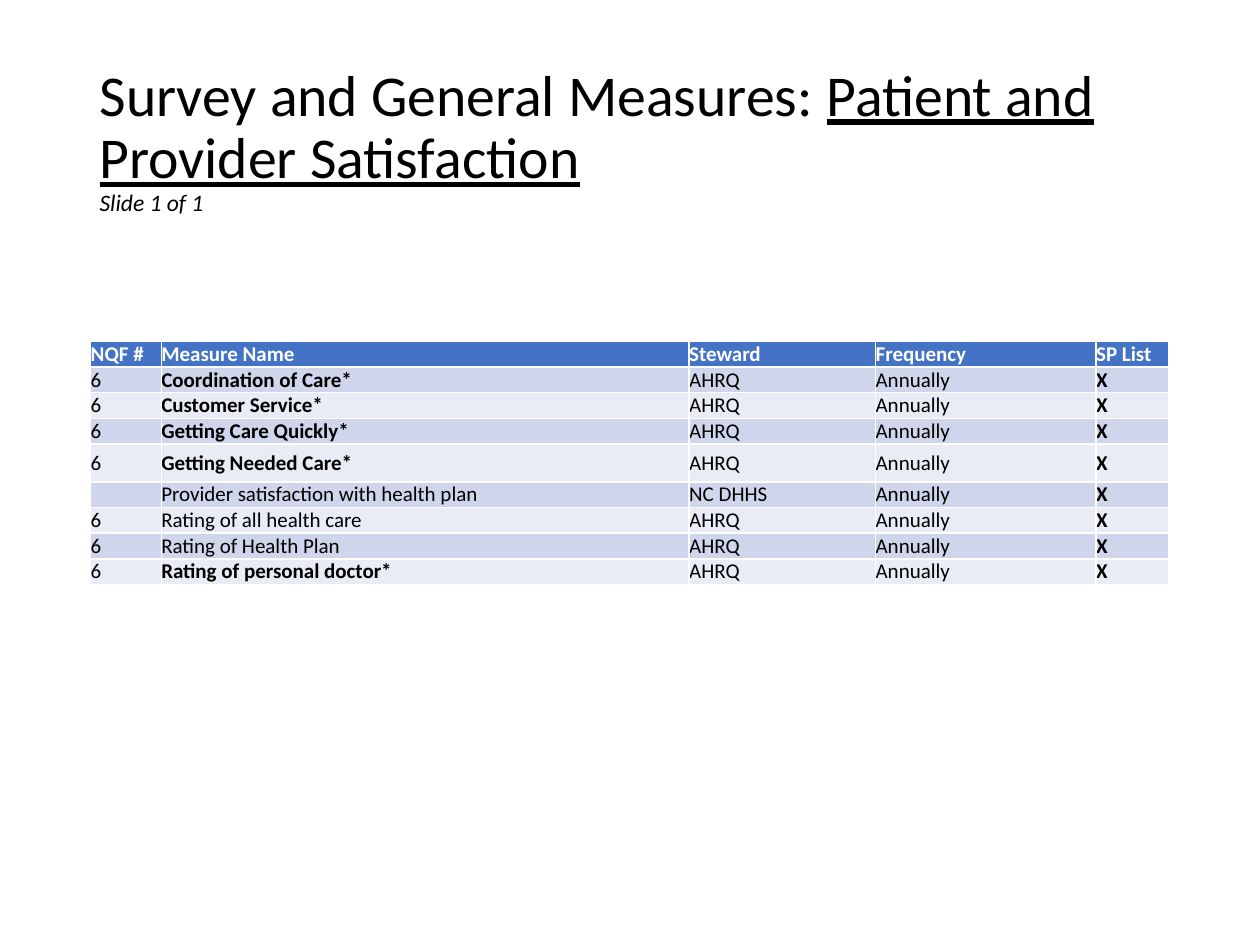
from lxml.etree import SubElement
from pptx import Presentation
from pptx.dml.color import RGBColor
from pptx.enum.text import MSO_ANCHOR, MSO_AUTO_SIZE, PP_ALIGN
from pptx.oxml.ns import qn
from pptx.util import Inches, Pt

FONT = "Calibri"
COLORS = {"text": "000000", "header_text": "FFFFFF", "header": "4472C4",
          "odd": "CFD5EA", "even": "E9EBF5"}

HEADERS = ["NQF #", "Measure Name", "Steward", "Frequency", "SP List"]
MEASURES = [
    ("6", "Coordination of Care*", "AHRQ"),
    ("6", "Customer Service*", "AHRQ"),
    ("6", "Getting Care Quickly*", "AHRQ"),
    ("6", "Getting Needed Care*", "AHRQ"),
    ("", "Provider satisfaction with health plan", "NC DHHS"),
    ("6", "Rating of all health care", "AHRQ"),
    ("6", "Rating of Health Plan", "AHRQ"),
    ("6", "Rating of personal doctor*", "AHRQ"),
]
COL_WIDTHS = [0.56, 4.19, 1.48, 1.75, 0.58]
ROW_HEIGHT = 0.2
TALL_ROW, TALL_HEIGHT = 4, 0.3


def format_run(r, size, color, bold=False, italic=False, underline=False):
    f = r.font
    f.name, f.size = FONT, Pt(size)
    f.bold, f.italic, f.underline = bold, italic, underline
    f.color.rgb = RGBColor.from_string(COLORS[color])


def add_title(slide, left, top, width, height):
    sp = slide.shapes.title
    sp.left, sp.top, sp.width, sp.height = map(Inches, (left, top, width, height))
    tf = sp.text_frame
    tf.word_wrap = True
    tf.auto_size = MSO_AUTO_SIZE.NONE
    tf.vertical_anchor = MSO_ANCHOR.MIDDLE
    p = tf.paragraphs[0]
    p.alignment = PP_ALIGN.LEFT
    p.line_spacing = 0.9
    r = p.add_run()
    r.text = "Survey and General Measures: "
    format_run(r, 33, "text")
    r = p.add_run()
    r.text = "Patient and Provider Satisfaction"
    format_run(r, 33, "text", underline=True)
    p.add_line_break()
    r = p.add_run()
    r.text = "Slide 1 of 1"
    format_run(r, 13.5, "text", italic=True)


def fill_cell(cell, text, fill, color, bold):
    cell.fill.solid()
    cell.fill.fore_color.rgb = RGBColor.from_string(COLORS[fill])
    cell.margin_left = cell.margin_right = 0
    cell.margin_top = cell.margin_bottom = 0
    cell.vertical_anchor = MSO_ANCHOR.MIDDLE
    p = cell.text_frame.paragraphs[0]
    if text:
        p.text = text
        format_run(p.runs[0], 12, color, bold)
    else:
        # An empty cell would otherwise stretch its row to the default 18 pt
        SubElement(p._p, qn("a:endParaRPr"), sz="1200")


def add_measures_table(slide, left, top):
    rows = [HEADERS] + [[*measure, "Annually", "X"] for measure in MEASURES]
    heights = [TALL_HEIGHT if i == TALL_ROW else ROW_HEIGHT for i in range(len(rows))]
    table = slide.shapes.add_table(
        len(rows), len(HEADERS), Inches(left), Inches(top),
        Inches(sum(COL_WIDTHS)), Inches(sum(heights))).table
    for column, width in zip(table.columns, COL_WIDTHS):
        column.width = Inches(width)
    for i, (row, height, values) in enumerate(zip(table.rows, heights, rows)):
        row.height = Inches(height)
        header = i == 0
        fill = "header" if header else "odd" if i % 2 else "even"
        color = "header_text" if header else "text"
        for cell, text in zip(row.cells, values):
            bold = header or text == "X" or text.endswith("*")
            fill_cell(cell, text, fill, color, bold)


def main():
    prs = Presentation()
    prs.slide_width, prs.slide_height = Inches(10), Inches(7.5)
    slide = prs.slides.add_slide(prs.slide_layouts[5])
    add_title(slide, 0.69, 0.4, 8.62, 1.45)
    add_measures_table(slide, 0.72, 2.71)
    prs.save("out.pptx")


if __name__ == "__main__":
    main()
